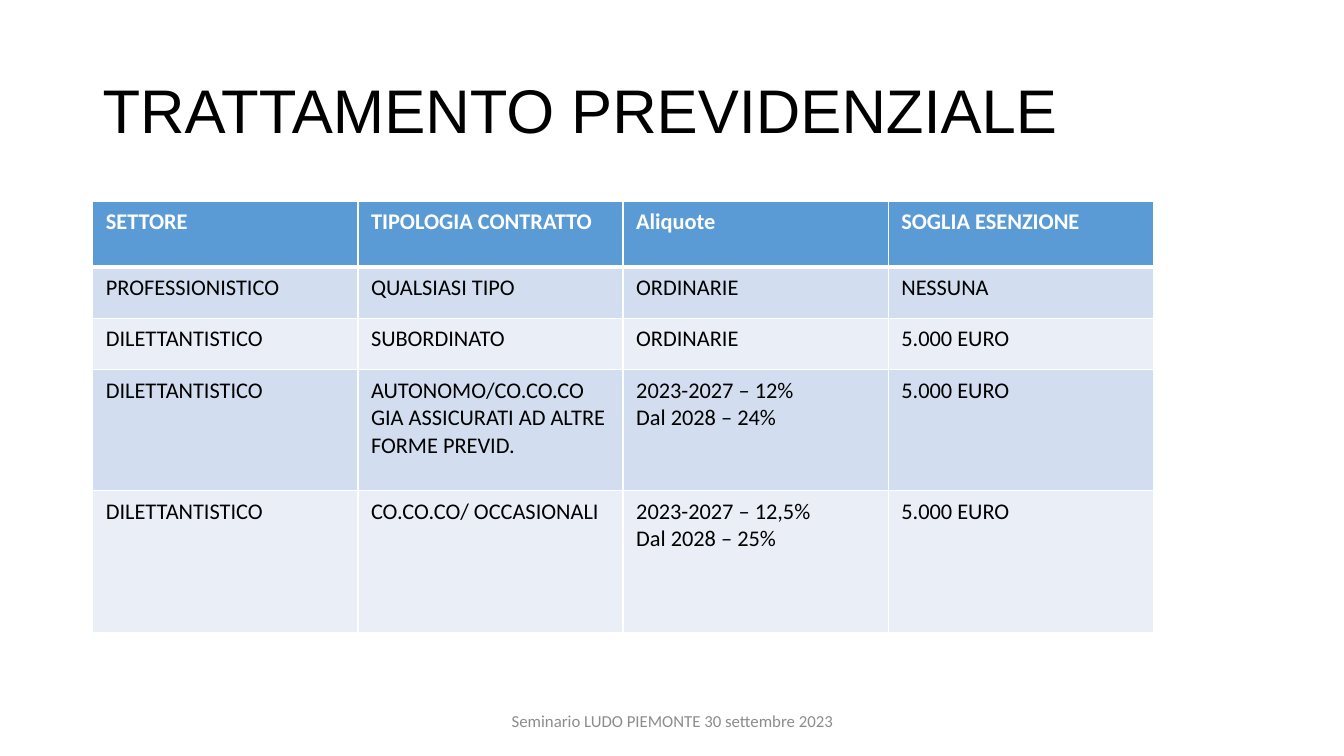
from dataclasses import dataclass

from lxml.etree import SubElement
from pptx import Presentation
from pptx.dml.color import RGBColor
from pptx.enum.text import MSO_ANCHOR as Anchor, PP_ALIGN as Align
from pptx.oxml.ns import qn
from pptx.slide import Slide
from pptx.table import _Cell as Cell
from pptx.text.text import TextFrame
from pptx.util import Inches, Pt


@dataclass(frozen=True)
class Style:
    font: str
    size: int
    color: str
    bold: bool = False


@dataclass(frozen=True)
class Theme:
    title: Style = Style("Arial", 44, "000000")
    header: Style = Style("Calibri", 16, "FFFFFF", True)
    body: Style = Style("Calibri", 16, "000000")
    footer: Style = Style("Calibri", 12, "8C8C8C")
    header_fill: str = "5B9BD5"
    band_fills: tuple[str, str] = ("EAEFF7", "D2DEEF")
    border: str = "FFFFFF"
    thin: int = 1
    thick: int = 3


@dataclass(frozen=True)
class Label:
    text: str
    box: tuple[float, float, float, float]
    style: Style
    align: Align = Align.LEFT
    line_spacing: float = 1.0


@dataclass(frozen=True)
class TreatmentRow:
    height: float
    texts: tuple[str, str, str, str]


THEME = Theme()
LABELS = (
    Label("TRATTAMENTO PREVIDENZIALE", (0.92, 0.4, 11.5, 1.45), THEME.title, line_spacing=0.9),
    Label("Seminario LUDO PIEMONTE 30 settembre 2023", (4.42, 6.95, 4.5, 0.4), THEME.footer, Align.CENTER),
)
TREATMENTS = (
    TreatmentRow(0.65, ("SETTORE", "TIPOLOGIA CONTRATTO", "Aliquote", "SOGLIA ESENZIONE")),
    TreatmentRow(0.51, ("PROFESSIONISTICO", "QUALSIASI TIPO", "ORDINARIE", "NESSUNA")),
    TreatmentRow(0.51, ("DILETTANTISTICO", "SUBORDINATO", "ORDINARIE", "5.000 EURO")),
    TreatmentRow(1.2, ("DILETTANTISTICO", "AUTONOMO/CO.CO.CO GIA ASSICURATI AD ALTRE FORME PREVID.",
                       "2023-2027 – 12%\nDal 2028 – 24%", "5.000 EURO")),
    TreatmentRow(1.41, ("DILETTANTISTICO", "CO.CO.CO/ OCCASIONALI",
                        "2023-2027 – 12,5%\nDal 2028 – 25%", "5.000 EURO")),
)
TABLE_LEFT, TABLE_TOP, COLUMN_WIDTH = 0.92, 2, 2.63


def write_text(frame: TextFrame, text: str, style: Style,
               align: Align = Align.LEFT, line_spacing: float = 1.0) -> None:
    frame.word_wrap = True
    frame.text = text
    for paragraph in frame.paragraphs:
        paragraph.alignment = align
        paragraph.line_spacing = line_spacing
        paragraph.font.name = style.font
        paragraph.font.size = Pt(style.size)
        paragraph.font.bold = style.bold
        paragraph.font.color.rgb = RGBColor.from_string(style.color)


def draw_label(slide: Slide, label: Label) -> None:
    frame = slide.shapes.add_textbox(*map(Inches, label.box)).text_frame
    frame.vertical_anchor = Anchor.MIDDLE
    write_text(frame, label.text, label.style, label.align, label.line_spacing)


def draw_borders(cell: Cell, top: int, bottom: int) -> None:
    properties = cell._tc.get_or_add_tcPr()
    widths = {"a:lnL": THEME.thin, "a:lnR": THEME.thin, "a:lnT": top, "a:lnB": bottom}
    for tag, width in widths.items():
        line = SubElement(properties, qn(tag), w=str(Pt(width)))
        fill = SubElement(line, qn("a:solidFill"))
        SubElement(fill, qn("a:srgbClr"), val=THEME.border)


def draw_cell(cell: Cell, text: str, row: int) -> None:
    cell.margin_left = cell.margin_right = Inches(0.13)
    cell.margin_top = cell.margin_bottom = Inches(0.07)
    draw_borders(cell, THEME.thick if row == 1 else THEME.thin,
                 THEME.thick if row == 0 else THEME.thin)
    cell.fill.solid()
    fill = THEME.header_fill if row == 0 else THEME.band_fills[row % 2]
    cell.fill.fore_color.rgb = RGBColor.from_string(fill)
    write_text(cell.text_frame, text, THEME.header if row == 0 else THEME.body)


def draw_treatments(slide: Slide) -> None:
    columns = len(TREATMENTS[0].texts)
    height = sum(treatment.height for treatment in TREATMENTS)
    table = slide.shapes.add_table(
        len(TREATMENTS), columns, Inches(TABLE_LEFT), Inches(TABLE_TOP),
        Inches(columns * COLUMN_WIDTH), Inches(height)).table
    for column in table.columns:
        column.width = Inches(COLUMN_WIDTH)
    for row, treatment in enumerate(TREATMENTS):
        table.rows[row].height = Inches(treatment.height)
        for column, text in enumerate(treatment.texts):
            draw_cell(table.cell(row, column), text, row)


def main() -> None:
    presentation = Presentation()
    presentation.slide_width = Inches(13.33)
    presentation.slide_height = Inches(7.5)
    slide = presentation.slides.add_slide(presentation.slide_layouts[6])
    draw_treatments(slide)
    for label in LABELS:
        draw_label(slide, label)
    presentation.save("out.pptx")


if __name__ == "__main__":
    main()
